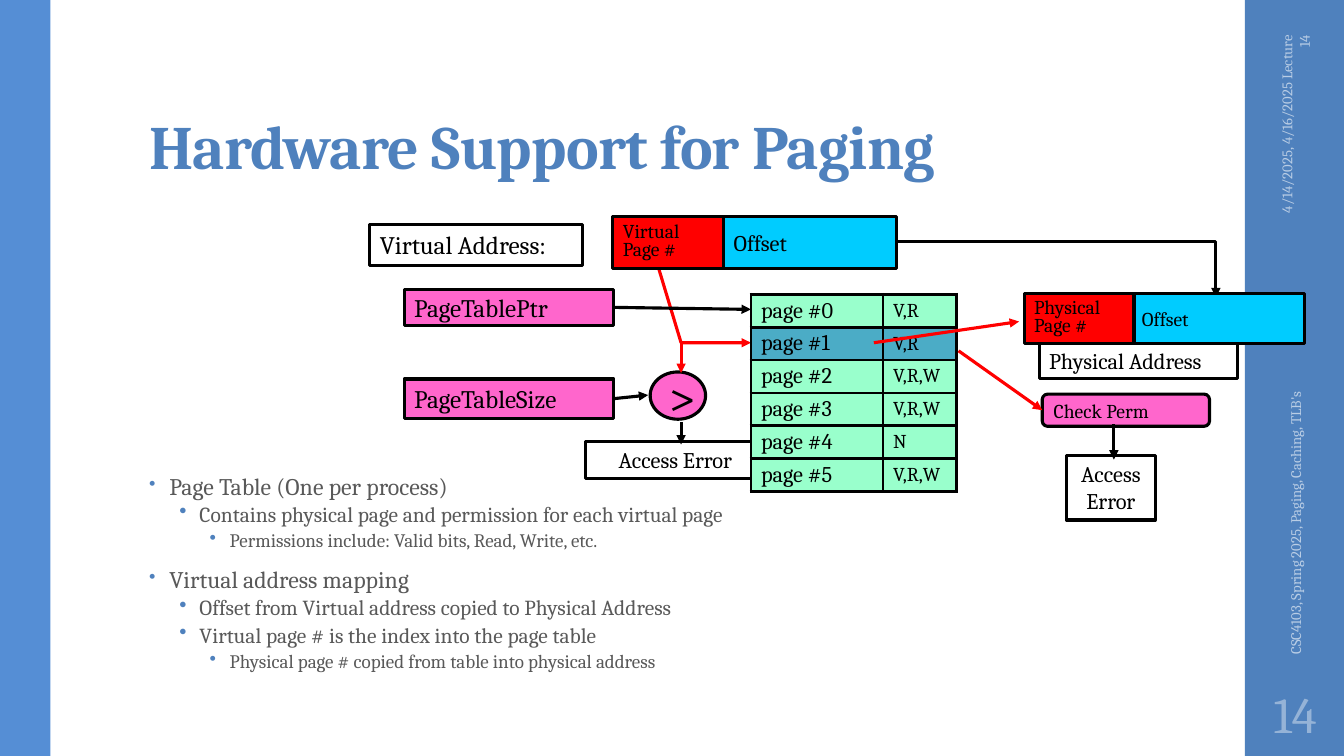
import pptx
import pptx.dml.color
import pptx.enum.dml
import pptx.enum.shapes
import pptx.enum.text
import pptx.oxml
import pptx.oxml.ns
import pptx.util
from lxml import etree

Pt = pptx.util.Pt
RGBColor = pptx.dml.color.RGBColor
SHAPE = pptx.enum.shapes.MSO_SHAPE
ALIGN = pptx.enum.text.PP_ALIGN
ANCHOR = pptx.enum.text.MSO_ANCHOR
qn = pptx.oxml.ns.qn

FONT = "Cambria"
LINE_WIDTH = 2.25
BLACK = RGBColor(0x00, 0x00, 0x00)
RED = RGBColor(0xFF, 0x00, 0x00)
CYAN = RGBColor(0x00, 0xCC, 0xFF)
PINK = RGBColor(0xFF, 0x66, 0xCC)
MINT = RGBColor(0x99, 0xFF, 0xCC)
TEAL = RGBColor(0x4B, 0xAC, 0xC6)
BLUE = RGBColor(0x4F, 0x81, 0xBD)
LEFT_BLUE = RGBColor(0x55, 0x8E, 0xD5)
FOOTER_BLUE = RGBColor(0xB9, 0xCD, 0xE5)
NUMBER_BLUE = RGBColor(0x95, 0xB3, 0xD7)
GREY = RGBColor(0x59, 0x59, 0x59)

PAGE_TABLE = [("page #0", "V,R"), ("page #1", "V,R"), ("page #2", "V,R,W"),
              ("page #3", "V,R,W"), ("page #4", "N"), ("page #5", "V,R,W")]
INDEXED_PAGE = 1

NOTES = [
    (0, "Page Table (One per process)"),
    (1, "Contains physical page and permission for each virtual page"),
    (2, "Permissions include: Valid bits, Read, Write, etc."),
    (0, "Virtual address mapping"),
    (1, "Offset from Virtual address copied to Physical Address"),
    (1, "Virtual page # is the index into the page table"),
    (2, "Physical page # copied from table into physical address"),
]
# size, line spacing, space before, space after, bullet size in percent
NOTE_LEVELS = [(17, 0.85, 10.5, 1.6, 80), (15.3, 0.8, 2.4, 2.4, 100),
               (13.6, 0.8, 2.4, 2.4, 100)]


def write(paragraph, text, size, color=BLACK, bold=False):
    run = paragraph.add_run()
    run.text = text
    run.font.name = FONT
    run.font.size = Pt(size)
    run.font.bold = bold
    run.font.color.rgb = color
    return run


def set_margins(frame, horizontal, vertical):
    frame.margin_left = frame.margin_right = Pt(horizontal)
    frame.margin_top = frame.margin_bottom = Pt(vertical)


def add_label(slide, box, text, size, color, align=ALIGN.LEFT,
              anchor=ANCHOR.MIDDLE, bold=False, rotation=0):
    label = slide.shapes.add_textbox(*map(Pt, box))
    label.rotation = rotation
    frame = label.text_frame
    frame.word_wrap = True
    frame.vertical_anchor = anchor
    paragraph = frame.paragraphs[0]
    paragraph.alignment = align
    return write(paragraph, text, size, color, bold)


def add_band(slide, left, width, color):
    band = slide.shapes.add_shape(SHAPE.RECTANGLE, Pt(left), 0, Pt(width), Pt(540))
    band.shadow.inherit = False
    band.fill.solid()
    band.fill.fore_color.rgb = color
    band.line.fill.background()


def add_block(slide, box, lines, size, fill=None, kind=SHAPE.RECTANGLE,
              align=ALIGN.LEFT, anchor=ANCHOR.MIDDLE, spacing=1.0):
    """Draw a black-outlined diagram block; without a fill it is see-through."""
    block = slide.shapes.add_shape(kind, *map(Pt, box))
    block.shadow.inherit = False
    if fill is None:
        block.fill.background()
    else:
        block.fill.solid()
        block.fill.fore_color.rgb = fill
    block.line.color.rgb = BLACK
    block.line.width = Pt(LINE_WIDTH)
    frame = block.text_frame
    frame.word_wrap = False
    frame.vertical_anchor = anchor
    set_margins(frame, 7.2, 3.6)
    for index, text in enumerate(lines):
        paragraph = frame.add_paragraph() if index else frame.paragraphs[0]
        paragraph.alignment = align
        paragraph.line_spacing = spacing
        write(paragraph, text, size)
    return block


def style_arrow(arrow, color):
    arrow.line.color.rgb = color
    arrow.line.width = Pt(LINE_WIDTH)
    etree.SubElement(arrow.line._get_or_add_ln(), qn("a:tailEnd"), type="triangle")


def add_arrow(slide, start, end, color=BLACK):
    arrow = slide.shapes.add_connector(
        pptx.enum.shapes.MSO_CONNECTOR.STRAIGHT, *map(Pt, start + end))
    style_arrow(arrow, color)
    etree.SubElement(arrow._element.spPr, qn("a:effectLst"))
    return arrow


def add_bent_arrow(slide, points, color=BLACK):
    start, *rest = [(Pt(x), Pt(y)) for x, y in points]
    builder = slide.shapes.build_freeform(*start)
    builder.add_line_segments(rest, close=False)
    arrow = builder.convert_to_shape()
    arrow.shadow.inherit = False
    arrow.fill.background()
    style_arrow(arrow, color)


def add_cell_borders(cell):
    properties = cell._tc.get_or_add_tcPr()
    for side in ("lnL", "lnR", "lnT", "lnB"):
        border = etree.SubElement(properties, qn(f"a:{side}"), w=str(Pt(LINE_WIDTH)))
        fill = etree.SubElement(border, qn("a:solidFill"))
        etree.SubElement(fill, qn("a:srgbClr"), val=str(BLACK))


def add_page_table(slide):
    row_height = 23.5
    table = slide.shapes.add_table(
        len(PAGE_TABLE), 2, Pt(536.4), Pt(210.2), Pt(147),
        Pt(row_height * len(PAGE_TABLE))).table
    table.first_row = table.horz_banding = False
    for column, width in zip(table.columns, (94.4, 52.6)):
        column.width = Pt(width)
    for row, entry in enumerate(PAGE_TABLE):
        table.rows[row].height = Pt(row_height)
        for column, size in enumerate((16, 14)):
            cell = table.cell(row, column)
            add_cell_borders(cell)
            cell.fill.solid()
            cell.fill.fore_color.rgb = TEAL if row == INDEXED_PAGE else MINT
            cell.vertical_anchor = ANCHOR.MIDDLE
            set_margins(cell, 7.2, 0)
            write(cell.text_frame.paragraphs[0], entry[column], size)


def add_notes_list(slide):
    frame = slide.shapes.add_textbox(Pt(99.4), Pt(340), Pt(677), Pt(147)).text_frame
    frame.word_wrap = True
    set_margins(frame, 7.2, 0)
    for index, (level, text) in enumerate(NOTES):
        size, spacing, before, after, bullet_size = NOTE_LEVELS[level]
        paragraph = frame.add_paragraph() if index else frame.paragraphs[0]
        paragraph.level = level
        paragraph.line_spacing = spacing
        paragraph.space_before = Pt(before if index else 0)
        paragraph.space_after = Pt(after)
        properties = paragraph._p.get_or_add_pPr()
        properties.set("marL", str(Pt(14.4 + 21.6 * level)))
        properties.set("indent", str(Pt(-14.4)))
        color = etree.SubElement(properties, qn("a:buClr"))
        etree.SubElement(color, qn("a:srgbClr"), val=str(BLUE))
        etree.SubElement(properties, qn("a:buSzPct"), val=str(bullet_size * 1000))
        etree.SubElement(properties, qn("a:buChar"), char="•")
        write(paragraph, text, size, GREY)


def add_frame(slide):
    """Draw the side bands, the title and the footer texts."""
    add_band(slide, 889.2, 70.8, BLUE)
    add_band(slide, 0, 36, LEFT_BLUE)
    title = add_label(slide, (99.4, 23, 763.2, 110.2), "Hardware Support for Paging",
                      44, BLUE, anchor=ANCHOR.BOTTOM, bold=True)
    title.font._element.set("spc", "-50")
    add_label(slide, (850.3, 78.5, 149.8, 28.8), "4/14/2025, 4/16/2025 Lecture 14",
              10.5, FOOTER_BLUE, ALIGN.RIGHT, rotation=270)
    add_label(slide, (784.1, 319, 282.2, 28.8),
              "CSC4103, Spring 2025, Paging, Caching, TLB's",
              10.5, FOOTER_BLUE, rotation=270)
    add_label(slide, (889.2, 486, 72, 46.8), "14", 36, NUMBER_BLUE, ALIGN.CENTER)


def add_diagram(slide):
    top, center = ANCHOR.TOP, ALIGN.CENTER
    add_bent_arrow(slide, [(640, 172.8), (868.5, 172.8), (868.5, 212.4)])
    add_block(slide, (742.3, 244.1, 141.8, 26.6), ["Physical Address"], 16, anchor=top)
    add_block(slide, (808.6, 209.5, 123.1, 36), ["Offset"], 14, CYAN)
    add_bent_arrow(slide, [(470.2, 190.8), (486.5, 244.8), (536.4, 244.8)], RED)
    add_block(slide, (517, 154.8, 123.1, 36.7), ["Offset"], 16, CYAN)
    add_block(slide, (437.8, 154.8, 78.8, 36.7), ["Virtual", "Page #"], 14, RED,
              spacing=0.75)
    add_block(slide, (264.2, 160.6, 151.9, 28.8), ["Virtual Address:"], 18, anchor=top)
    add_block(slide, (418.3, 315.4, 128.2, 26.6), ["Access Error"], 16, align=center,
              anchor=top)
    add_block(slide, (464.4, 265.7, 39.6, 33.8), [">"], 36, PINK, SHAPE.OVAL)
    add_arrow(slide, (486.5, 244.8), (486.5, 266.4), RED)
    add_arrow(slide, (486.5, 301.7), (486.5, 317.5))

    table_size = add_block(slide, (288.7, 270.7, 149.8, 28.1), ["PageTableSize"], 18, PINK)
    add_arrow(slide, (438.5, 282.2), (463, 282.2)).begin_connect(table_size, 3)
    table_pointer = add_block(slide, (288.7, 206.6, 149.8, 25.9), ["PageTablePtr"], 18, PINK)
    add_arrow(slide, (438.5, 219), (536.4, 221)).begin_connect(table_pointer, 3)
    add_page_table(slide)

    check = add_block(slide, (744.5, 281.5, 119.5, 23), ["Check Perm"], 14, PINK,
                      SHAPE.ROUNDED_RECTANGLE)
    add_arrow(slide, (684.7, 250.6), (744.5, 292.3), RED).end_connect(check, 1)
    add_block(slide, (761.8, 325.4, 63.4, 46.1), ["Access", "Error"], 16, align=center,
              anchor=top)
    add_arrow(slide, (795.6, 303.1), (795.6, 328.3))
    add_block(slide, (731.5, 209.5, 78.5, 36), ["Physical", "Page #"], 14, RED,
              spacing=0.75)
    add_arrow(slide, (624.2, 244.8), (727.9, 229.7), RED)


def main():
    presentation = pptx.Presentation()
    presentation.slide_width, presentation.slide_height = Pt(960), Pt(540)
    slide = presentation.slides.add_slide(presentation.slide_layouts[6])
    add_frame(slide)
    add_notes_list(slide)
    add_diagram(slide)
    presentation.save("out.pptx")


if __name__ == "__main__":
    main()
